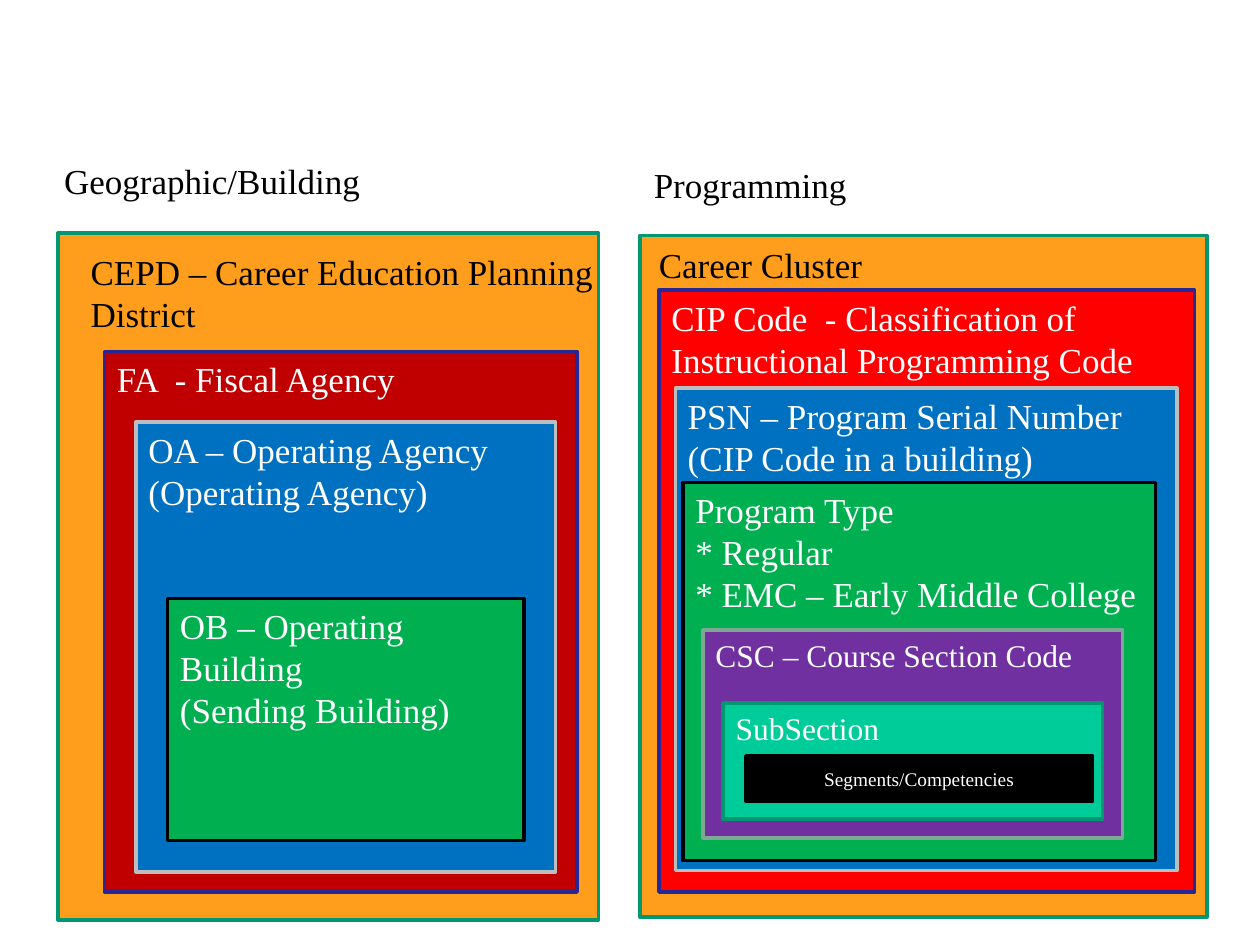
import pptx
import pptx.dml.color
import pptx.enum.shapes
import pptx.enum.text
import pptx.util

Inches = pptx.util.Inches
PP_ALIGN = pptx.enum.text.PP_ALIGN
ANCHOR = pptx.enum.text.MSO_ANCHOR

FONT = "Times New Roman"
COLORS = {
    "black": "000000", "white": "FFFFFF", "orange": "FF9E1D", "teal": "009771",
    "dark red": "C00000", "red": "FF0000", "navy": "262697", "blue": "0070C0",
    "silver": "BDBDBD", "green": "00B050", "purple": "7030A0",
    "sage": "7EA795", "mint": "00CC99",
}

# Content: text, (left, top, width, height), then format; \v is a line break
HEADINGS = [
    ("Geographic/Building", (0.41, 1.22, 3.08, 0.44)),
    ("Programming", (5.09, 1.25, 3.08, 0.44)),
]
OUTER_BOXES = [(0.46, 1.85, 4.29, 5.45), (5.08, 1.87, 4.5, 5.41)]
OUTER_LABELS = [
    ("CEPD – Career Education Planning District", (0.62, 1.94, 4.25, 0.77)),
    ("Career Cluster", (5.13, 1.88, 4.25, 0.44)),
]
# Nested levels, outermost first: text, place, fill, line, text size
GEOGRAPHIC_LEVELS = [
    ("FA  - Fiscal Agency", (0.83, 2.79, 3.75, 4.29), "dark red", "navy", 20),
    ("OA – Operating Agency\v(Operating Agency)",
     (1.08, 3.35, 3.33, 3.57), "blue", "silver", 20),
    ("OB – Operating Building\v(Sending Building)",
     (1.33, 4.75, 2.83, 1.92), "green", "black", 20),
]
PROGRAMMING_LEVELS = [
    ("CIP Code  - Classification of Instructional Programming Code",
     (5.23, 2.3, 4.25, 4.78), "red", "navy", 20),
    ("PSN – Program Serial Number (CIP Code in a building)",
     (5.36, 3.08, 3.98, 3.83), "blue", "silver", 20),
    ("Program Type\v* Regular\n* EMC – Early Middle College",
     (5.42, 3.83, 3.75, 3), "green", "black", 20),
    ("CSC – Course Section Code", (5.58, 5, 3.33, 1.65), "purple", "sage", 18),
    ("SubSection", (5.74, 5.58, 3.01, 0.92), "mint", "teal", 18),
]
SEGMENTS = ("Segments/Competencies", (5.92, 6, 2.75, 0.36))

presentation = pptx.Presentation()
presentation.slide_width = Inches(10)
presentation.slide_height = Inches(7.5)
slide = presentation.slides.add_slide(presentation.slide_layouts[6])


def rgb(name):
    return pptx.dml.color.RGBColor.from_string(COLORS[name])


def write(frame, text, size=20, color="black", align=PP_ALIGN.LEFT, anchor=ANCHOR.TOP):
    frame.word_wrap = True
    frame.vertical_anchor = anchor
    frame.text = text
    for paragraph in frame.paragraphs:
        paragraph.alignment = align
        for run in paragraph.runs:
            run.font.name = FONT
            run.font.size = pptx.util.Pt(size)
            run.font.color.rgb = rgb(color)


def add_label(text, place):
    label = slide.shapes.add_textbox(*map(Inches, place))
    write(label.text_frame, text)
    return label


def add_box(place, fill, line):
    box = slide.shapes.add_shape(
        pptx.enum.shapes.MSO_SHAPE.RECTANGLE, *map(Inches, place))
    box.shadow.inherit = False
    box.fill.solid()
    box.fill.fore_color.rgb = rgb(fill)
    box.line.color.rgb = rgb(line)
    box.line.width = pptx.util.Pt(2)
    return box


# Column headings
for text, place in HEADINGS:
    add_label(text, place)

# Outer boxes and their labels
for place in OUTER_BOXES:
    add_box(place, "orange", "teal")
for text, place in OUTER_LABELS:
    add_label(text, place)

# Nested levels
for text, place, fill, line, size in GEOGRAPHIC_LEVELS + PROGRAMMING_LEVELS:
    write(add_box(place, fill, line).text_frame, text, size=size, color="white")

# Innermost level
segments_text, segments_place = SEGMENTS
write(add_box(segments_place, "black", "black").text_frame, segments_text,
      size=11, color="white", align=PP_ALIGN.CENTER, anchor=ANCHOR.MIDDLE)

presentation.save("out.pptx")
